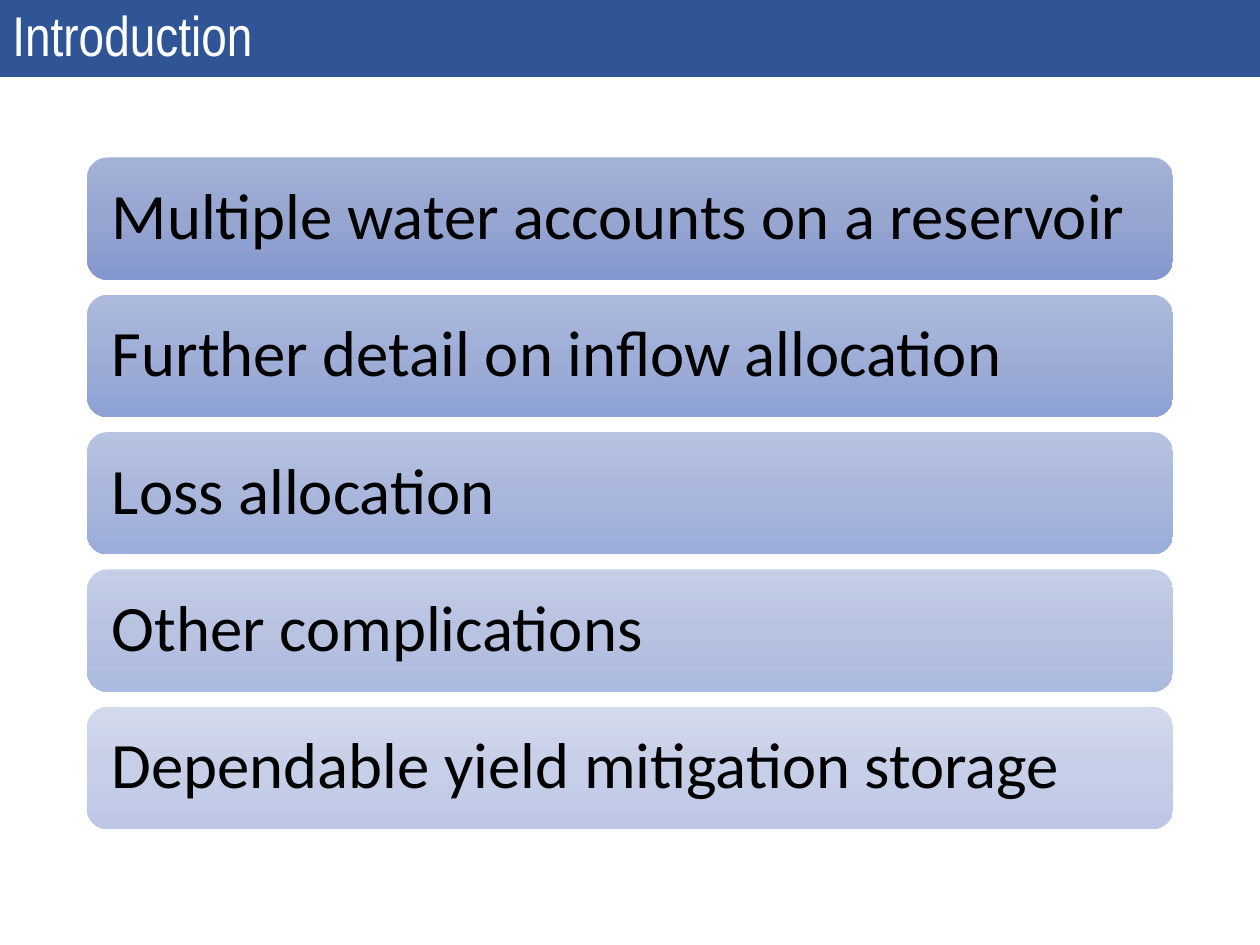
from copy import deepcopy

from pptx import Presentation
from pptx.dml.color import RGBColor
from pptx.enum.shapes import MSO_SHAPE
from pptx.enum.text import MSO_ANCHOR, PP_ALIGN
from pptx.oxml.ns import qn
from pptx.util import Inches, Pt

COLORS = {"title_bar": "2F5597", "title_text": "FFFFFF", "card_text": "000000"}

# Card text with its gradient colours from top to bottom
CARDS = [
    ("Multiple water accounts on a reservoir", ("A4B2D9", "97A6D1", "8497CE")),
    ("Further detail on inflow allocation", ("ACBADD", "9FAED7", "8DA1D4")),
    ("Loss allocation", ("B7C3E2", "AAB7DC", "9BADDA")),
    ("Other complications", ("C4CEE7", "B8C3E2", "ACBAE0")),
    ("Dependable yield mitigation storage", ("D3DAED", "C7CFE8", "BEC8E6")),
]
CARD_LEFT, CARD_TOP, CARD_WIDTH, CARD_HEIGHT = 0.69, 1.25, 8.62, 0.97
CARD_PITCH = 1.09


def set_gradient(sp, colors):
    """Fill a shape with three evenly spaced colours, top to bottom."""
    fill = sp.fill
    fill.gradient()
    fill.gradient_angle = 270
    stops = sp._element.spPr.find(qn("a:gradFill")).find(qn("a:gsLst"))
    stops.append(deepcopy(stops[-1]))
    for i, (stop, color) in enumerate(zip(fill.gradient_stops, colors)):
        stop.position = i / 2
        stop.color.rgb = RGBColor.from_string(color)


def add_box(slide, kind, box, text, font, size, color, inset):
    """Add an outline-free shape with one line of left-aligned text."""
    sp = slide.shapes.add_shape(kind, *map(Inches, box))
    sp.shadow.inherit = False
    sp.line.fill.background()
    tf = sp.text_frame
    tf.word_wrap = True
    tf.vertical_anchor = MSO_ANCHOR.MIDDLE
    tf.margin_left = tf.margin_right = Inches(inset)
    p = tf.paragraphs[0]
    p.text = text
    p.alignment = PP_ALIGN.LEFT
    p.line_spacing = 0.9
    p.font.name = font
    p.font.size = Pt(size)
    p.font.color.rgb = RGBColor.from_string(color)
    return sp


def add_title_bar(slide, text):
    sp = add_box(slide, MSO_SHAPE.RECTANGLE, (0, 0, 10, 0.61), text,
                 "Arial Narrow", 32, COLORS["title_text"], 0.1)
    sp.fill.solid()
    sp.fill.fore_color.rgb = RGBColor.from_string(COLORS["title_bar"])


def add_card(slide, row, text, gradient):
    box = (CARD_LEFT, CARD_TOP + row * CARD_PITCH, CARD_WIDTH, CARD_HEIGHT)
    sp = add_box(slide, MSO_SHAPE.ROUNDED_RECTANGLE, box, text,
                 "Calibri", 37, COLORS["card_text"], 0.15)
    set_gradient(sp, gradient)


def main():
    prs = Presentation()
    prs.slide_width, prs.slide_height = Inches(10), Inches(7.5)
    slide = prs.slides.add_slide(prs.slide_layouts[6])

    # Title
    add_title_bar(slide, "Introduction")

    # Topic cards
    for row, (text, gradient) in enumerate(CARDS):
        add_card(slide, row, text, gradient)

    prs.save("out.pptx")


if __name__ == "__main__":
    main()
